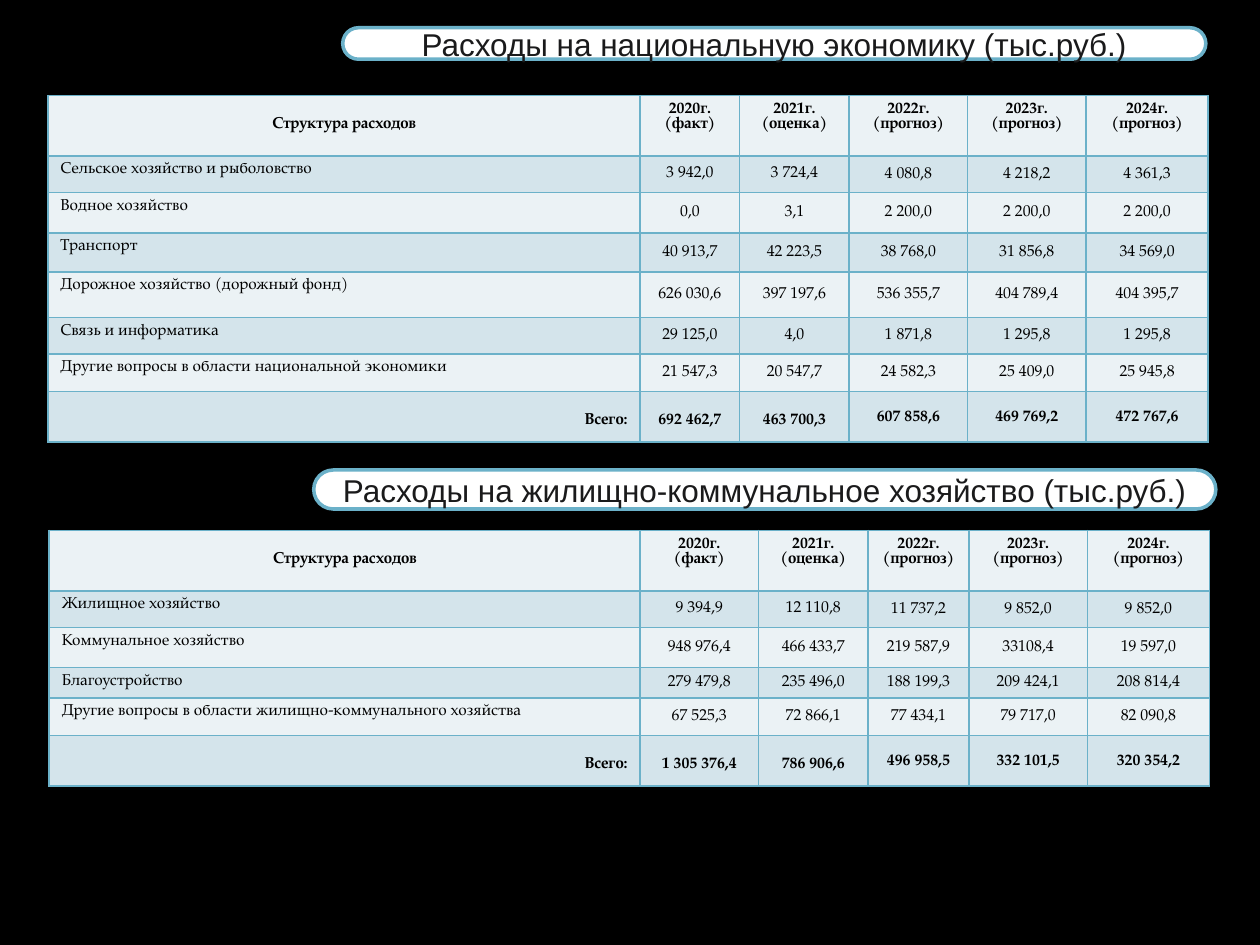
from lxml.etree import SubElement
from pptx import Presentation
from pptx.dml.color import RGBColor
from pptx.enum.shapes import MSO_SHAPE
from pptx.enum.text import MSO_ANCHOR, PP_ALIGN
from pptx.oxml.ns import qn
from pptx.util import Inches, Pt

COLS, ROWS = 1000, 750
UNIT = Inches(10) // COLS
EDGE = "6BB1C9"
BANDS = ["EBF2F5", "D4E4EB"]
YEARS = ["2021г. (оценка)", "2022г. (прогноз)", "2023г. (прогноз)", "2024г. (прогноз)"]
HEAD = "Структура расходов"

ECONOMY = [
    [HEAD, "2020г. (факт)", *YEARS],
    ["Сельское хозяйство и рыболовство", "3 942,0", "3 724,4", "4 080,8", "4 218,2", "4 361,3"],
    ["Водное хозяйство", "0,0", "3,1", "2 200,0", "2 200,0", "2 200,0"],
    ["Транспорт", "40 913,7", "42 223,5", "38 768,0", "31 856,8", "34 569,0"],
    ["Дорожное хозяйство (дорожный фонд)", "626 030,6", "397 197,6", "536 355,7", "404 789,4", "404 395,7"],
    ["Связь и информатика", "29 125,0", "4,0", "1 871,8", "1 295,8", "1 295,8"],
    ["Другие вопросы в области национальной экономики", "21 547,3", "20 547,7", "24 582,3", "25 409,0", "25 945,8"],
    ["Всего:", "692 462,7", "463 700,3", "607 858,6", "469 769,2", "472 767,6"],
]
HOUSING = [
    [HEAD, "2020г.\n(факт)", *YEARS],
    ["Жилищное хозяйство", "9 394,9", "12 110,8", "11 737,2", "9 852,0", "9 852,0"],
    ["Коммунальное хозяйство", "948 976,4", "466 433,7", "219 587,9", "33108,4", "19 597,0"],
    ["Благоустройство", "279 479,8", "235 496,0", "188 199,3", "209 424,1", "208 814,4"],
    ["Другие вопросы в области жилищно-коммунального хозяйства", "67 525,3", "72 866,1", "77 434,1", "79 717,0", "82 090,8"],
    ["Всего:", "1 305 376,4", "786 906,6", "496 958,5", "332 101,5", "320 354,2"],
]


def paint(fill, color):
    fill.solid()
    fill.fore_color.rgb = RGBColor.from_string(color)


def style(para, name, size, color, bold=False):
    para.font.name = name
    para.font.size = Pt(size)
    para.font.bold = bold
    para.font.color.rgb = RGBColor.from_string(color)


def border(cell):
    props = cell._tc.get_or_add_tcPr()
    for side in ("a:lnL", "a:lnR", "a:lnT", "a:lnB"):
        line = SubElement(props, qn(side), w=str(Pt(1)))
        SubElement(SubElement(line, qn("a:solidFill")), qn("a:srgbClr"), val=EDGE)


def title(slide, box, text):
    pill = slide.shapes.add_shape(MSO_SHAPE.ROUNDED_RECTANGLE, *[n * UNIT for n in box])
    pill.adjustments[0] = 0.5
    pill.shadow.inherit = False
    paint(pill.fill, "FFFFFF")
    paint(pill.line.fill, EDGE)
    pill.line.width = Pt(2)
    frame = pill.text_frame
    frame.word_wrap = True
    frame.vertical_anchor = MSO_ANCHOR.MIDDLE
    frame.margin_top = frame.margin_bottom = 0
    frame.text = text
    para = frame.paragraphs[0]
    para.alignment = PP_ALIGN.CENTER
    style(para, "Arial", 18, "1A1A1B")


def fill_cell(cell, text, row, col, last):
    head, total = row == 0, row == last
    border(cell)
    paint(cell.fill, BANDS[0 if head else 1 if total else row % 2])
    label = col == 0 and not total
    cell.vertical_anchor = MSO_ANCHOR.TOP if head or label else MSO_ANCHOR.MIDDLE
    if col > 2 and not head:
        cell.margin_left = cell.margin_right = cell.margin_top = UNIT
        cell.margin_bottom = 0
    cell.text = text
    for para in cell.text_frame.paragraphs:
        style(para, "TeX Gyre Pagella", 9, "000000", head or total)
        para.alignment = PP_ALIGN.CENTER
        if col == 0 and not head:
            para.alignment = PP_ALIGN.RIGHT if total else PP_ALIGN.LEFT
        if head and col == 0:
            para.line_spacing = 2.0
        elif total and col < 3:
            para.line_spacing = 1.5


def budget(slide, left, top, wide, high, data):
    box = [n * UNIT for n in (left, top, sum(wide), sum(high))]
    table = slide.shapes.add_table(len(high), len(wide), *box).table
    table.first_row = table.horz_banding = False
    for col, size in zip(table.columns, wide):
        col.width = size * UNIT
    for row, size in zip(table.rows, high):
        row.height = size * UNIT
    for r, line in enumerate(data):
        for c, text in enumerate(line):
            fill_cell(table.cell(r, c), text, r, c, len(data) - 1)


def main():
    deck = Presentation()
    deck.slide_width, deck.slide_height = COLS * UNIT, ROWS * UNIT
    slide = deck.slides.add_slide(deck.slide_layouts[6])
    paint(slide.background.fill, "000000")
    title(slide, (272, 22, 685, 25), "Расходы на национальную экономику (тыс.руб.)")
    budget(slide, 38, 76, [470, 79, 87, 94, 94, 97], [48, 29, 32, 31, 36, 29, 30, 40], ECONOMY)
    title(slide, (249, 373, 716, 31), "Расходы на жилищно-коммунальное хозяйство (тыс.руб.)")
    budget(slide, 39, 421, [469, 94, 87, 80, 94, 97], [48, 29, 32, 24, 30, 40], HOUSING)
    deck.save("out.pptx")


if __name__ == "__main__":
    main()
